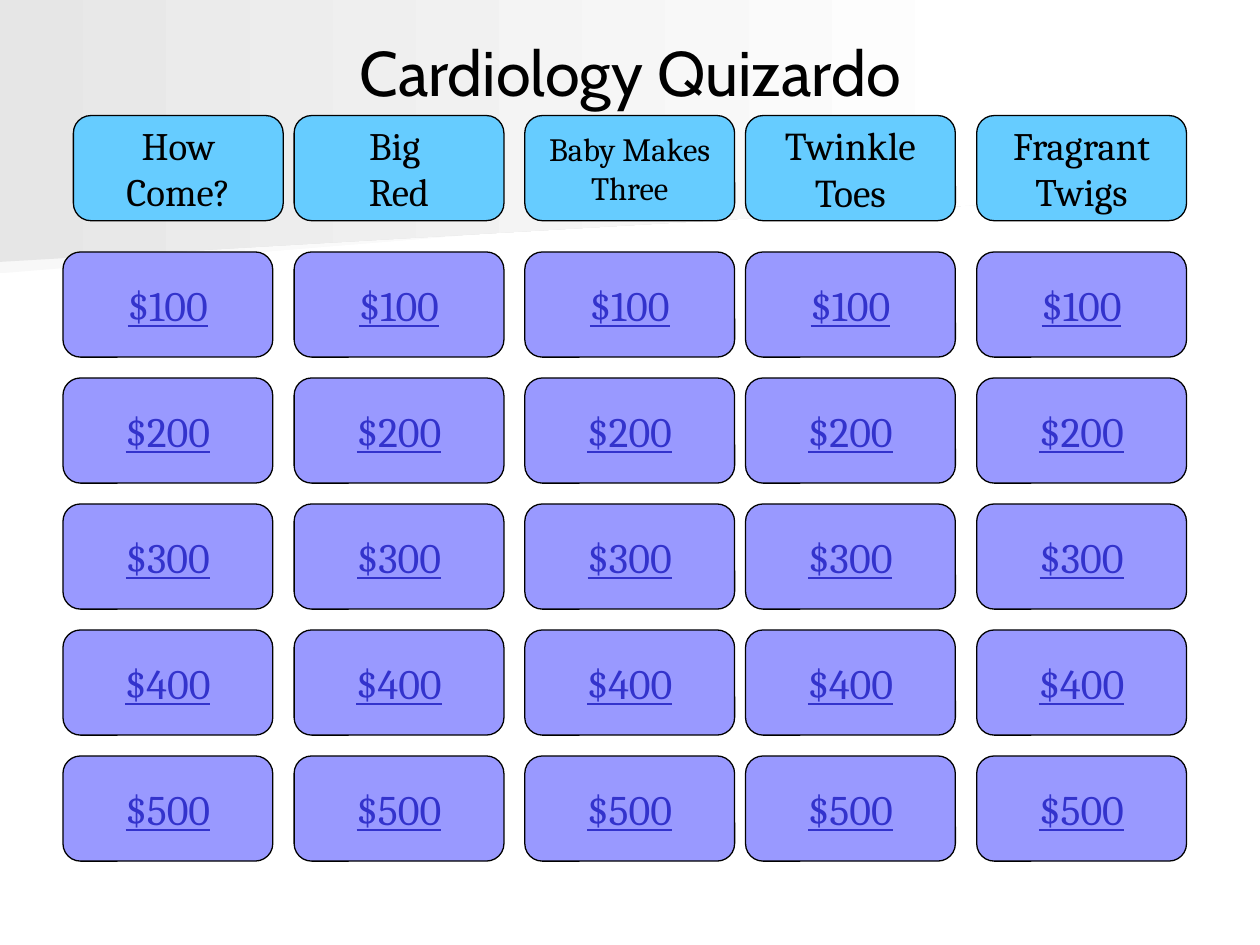
from pptx import Presentation
from pptx.dml.color import RGBColor
from pptx.enum.shapes import MSO_SHAPE
from pptx.enum.text import MSO_ANCHOR, MSO_AUTO_SIZE, PP_ALIGN
from pptx.util import Cm, Pt

HUES = {
    "black": "000000",
    "white": "FFFFFF",
    "head": "66CCFF",
    "cell": "9999FF",
    "link": "3333CC",
    "pale": "F8F8F8",
    "gray": "E6E6E6",
}
COLS = [1.27, 5.93, 10.58, 15.03, 19.69]
TOPICS = [
    ("How Come?", 22.2),
    ("Big \nRed", 22.2),
    ("Baby Makes Three", 18.6),
    ("Twinkle Toes", 22.5),
    ("Fragrant Twigs", 22.2),
]
HEAD = {"name": "Cambria"}
LINK = {"name": "Cambria", "size": Pt(24), "underline": True}
TITLE = {"name": "Cabin", "size": Pt(36), "bold": False}
BANDS = [
    ("pale", [(19.76, 3.89), (0, 5.51), (0, 2.57), (19.79, 2.57), (19.76, 3.25)]),
    ("gray", [(20.12, 4.11), (0, 5.28), (0, 0), (20.12, 0)]),
]


def hue(key):
    return RGBColor.from_string(HUES[key])


def place(shape, left, top, width, height):
    box = {"left": left, "top": top, "width": width, "height": height}
    for key, val in box.items():
        setattr(shape, key, Cm(val))


def write(shape, text, font, ink, wrap=True):
    frame = shape.text_frame
    frame.text = text
    look = {
        "word_wrap": wrap,
        "vertical_anchor": MSO_ANCHOR.MIDDLE,
        "auto_size": MSO_AUTO_SIZE.NONE,
    }
    for key, val in look.items():
        setattr(frame, key, val)
    for para in frame.paragraphs:
        para.alignment = PP_ALIGN.CENTER
        for run in para.runs:
            for key, val in font.items():
                setattr(run.font, key, val)
            run.font.color.rgb = hue(ink)


def add_band(slide, tone, spots):
    spots = [(Cm(x), Cm(y)) for x, y in spots]
    pen = slide.shapes.build_freeform(*spots[0])
    pen.add_line_segments(spots[1:], close=True)
    band = pen.convert_to_shape()
    band.shadow.inherit = False
    band.line.fill.background()
    band.fill.gradient()
    band.fill.gradient_angle = 0
    for stop, key in zip(band.fill.gradient_stops, (tone, "white")):
        stop.color.rgb = hue(key)


def add_card(slide, left, top, fill, text, font, ink, wrap):
    card = slide.shapes.add_shape(
        MSO_SHAPE.FLOWCHART_ALTERNATE_PROCESS,
        Cm(left), Cm(top), Cm(4.23), Cm(2.12),
    )
    card.shadow.inherit = False
    card.fill.solid()
    card.fill.fore_color.rgb = hue(fill)
    card.line.color.rgb = hue("black")
    card.line.width = Pt(0.75)
    write(card, text, font, ink, wrap)


def add_title(slide, text):
    title = slide.shapes.title
    place(title, 1.27, 0.76, 22.86, 1.35)
    write(title, text, TITLE, "black")
    slide.shapes._spTree.append(title._element)


def main():
    deck = Presentation()
    deck.slide_width, deck.slide_height = Cm(25.4), Cm(19.05)
    slide = deck.slides.add_slide(deck.slide_layouts[5])
    for tone, spots in BANDS:
        add_band(slide, tone, spots)
    add_title(slide, "Cardiology Quizardo")
    for col, (left, (topic, size)) in enumerate(zip(COLS, TOPICS)):
        shift = 0.21 if col == 0 else 0
        font = {**HEAD, "size": Pt(size)}
        add_card(slide, left + shift, 2.33, "head", topic, font, "black", True)
        for row in range(1, 6):
            top = 2.54 * (row + 1)
            add_card(slide, left, top, "cell", f"${row}00", LINK, "link", False)
    deck.save("out.pptx")


if __name__ == "__main__":
    main()
